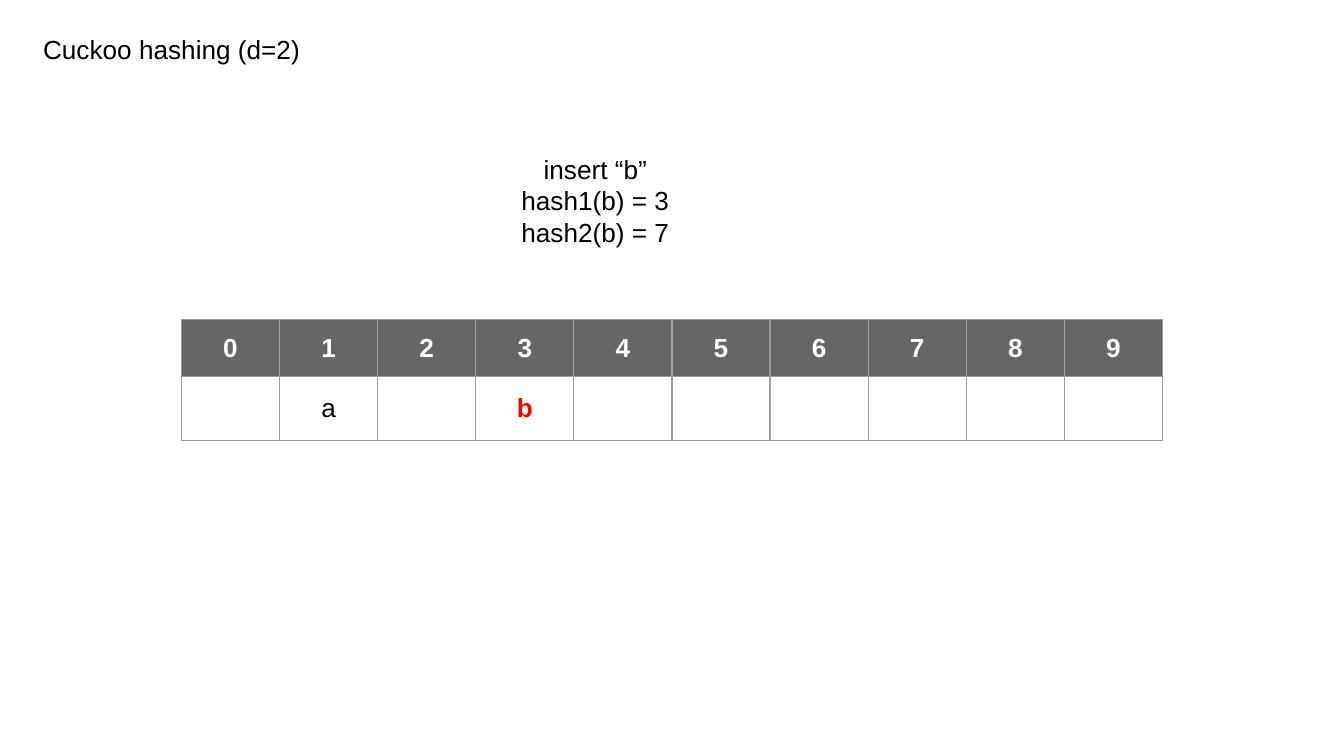
from dataclasses import dataclass

from lxml.etree import SubElement
from pptx import Presentation
from pptx.dml.color import RGBColor
from pptx.enum.text import MSO_ANCHOR as Anchor, MSO_AUTO_SIZE as AutoSize, PP_ALIGN as Align
from pptx.oxml.ns import qn
from pptx.util import Pt

COLORS = {"text": "000000", "header_text": "FFFFFF", "header": "666666",
          "border": "9E9E9E", "inserted": "FF0000"}
FONT = "Arial"
TEXT_SIZE = 14
EMPTY_SIZE = 18
INSET = 7.2
BUCKETS = 10
BUCKET_WIDTH = 52.56
ROW_HEIGHT = 30.24


@dataclass
class Label:
    text: str
    left: float
    top: float
    width: float
    height: float
    align: Align


@dataclass
class Entry:
    text: str = ""
    color: str = "text"
    bold: bool = False
    fill: str = ""


def set_insets(target) -> None:
    target.margin_left = target.margin_right = Pt(INSET)
    target.margin_top = target.margin_bottom = Pt(INSET)


def format_text(frame, align: Align, color: str, bold: bool = False) -> None:
    for paragraph in frame.paragraphs:
        paragraph.alignment = align
        for run in paragraph.runs:
            run.font.name = FONT
            run.font.size = Pt(TEXT_SIZE)
            run.font.bold = bold
            run.font.color.rgb = RGBColor.from_string(COLORS[color])


def fill_label(shape, label: Label) -> None:
    shape.left, shape.top = Pt(label.left), Pt(label.top)
    shape.width, shape.height = Pt(label.width), Pt(label.height)
    frame = shape.text_frame
    frame.text = label.text
    frame.word_wrap = True
    frame.auto_size = AutoSize.NONE
    frame.vertical_anchor = Anchor.TOP
    set_insets(frame)
    format_text(frame, label.align, "text")


def draw_borders(cell) -> None:
    properties = cell._tc.get_or_add_tcPr()
    for side in ("a:lnL", "a:lnR", "a:lnT", "a:lnB"):
        line = SubElement(properties, qn(side), w=str(Pt(0.75)))
        solid = SubElement(line, qn("a:solidFill"))
        SubElement(solid, qn("a:srgbClr"), val=COLORS["border"])


def fill_cell(cell, entry: Entry) -> None:
    draw_borders(cell)
    if entry.fill:
        cell.fill.solid()
        cell.fill.fore_color.rgb = RGBColor.from_string(COLORS[entry.fill])
    else:
        cell.fill.background()
    set_insets(cell)
    cell.vertical_anchor = Anchor.MIDDLE
    if entry.text:
        cell.text_frame.text = entry.text
        format_text(cell.text_frame, Align.CENTER, entry.color, entry.bold)
    else:
        # Empty buckets keep a larger font, which sets the row height
        end = SubElement(cell.text_frame.paragraphs[0]._p, qn("a:endParaRPr"),
                         sz=str(EMPTY_SIZE * 100))
        SubElement(end, qn("a:latin"), typeface=FONT)


presentation = Presentation()
presentation.slide_width, presentation.slide_height = Pt(720), Pt(405)
slide = presentation.slides.add_slide(presentation.slide_layouts[5])

# Title
fill_label(slide.shapes.title,
           Label("Cuckoo hashing (d=2)", 15.84, 10.8, 197.28, 36, Align.LEFT))

# Hash table: bucket numbers above their contents
contents = {1: Entry("a"), 3: Entry("b", "inserted", True)}
rows = [
    [Entry(str(i), "header_text", True, "header") for i in range(BUCKETS)],
    [contents.get(i, Entry()) for i in range(BUCKETS)],
]
buckets = slide.shapes.add_table(
    len(rows), BUCKETS, Pt(97.2), Pt(171.36),
    Pt(BUCKETS * BUCKET_WIDTH), Pt(len(rows) * ROW_HEIGHT)).table
buckets.first_row = buckets.horz_banding = False
for column in buckets.columns:
    column.width = Pt(BUCKET_WIDTH)
for r, entries in enumerate(rows):
    buckets.rows[r].height = Pt(ROW_HEIGHT)
    for c, entry in enumerate(entries):
        fill_cell(buckets.cell(r, c), entry)

# Insert operation
operation = Label("insert “b”\nhash1(b) = 3\nhash2(b) = 7",
                  220.32, 74.88, 197.28, 59.76, Align.CENTER)
fill_label(slide.shapes.add_textbox(0, 0, 0, 0), operation)

presentation.save("out.pptx")
